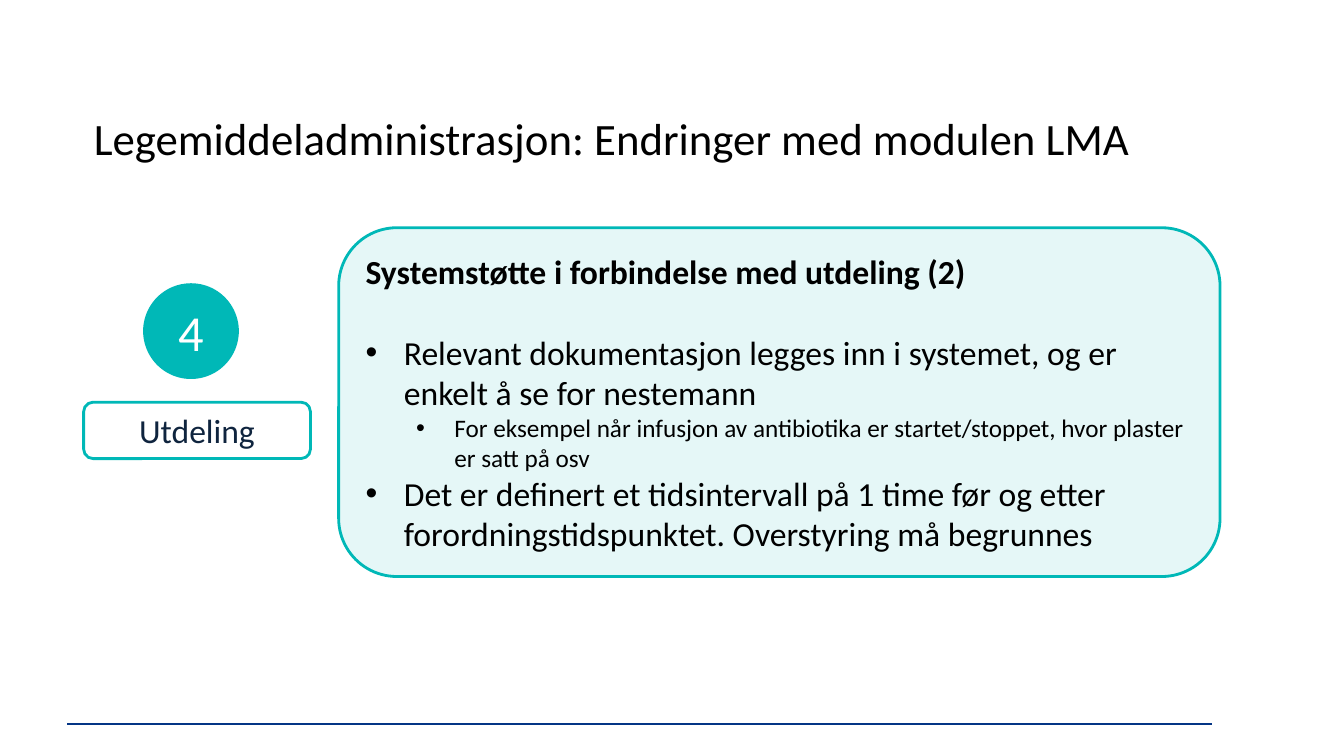
import pptx
import pptx.dml.color
import pptx.enum.shapes
import pptx.enum.text
import pptx.oxml.ns
import pptx.util
from lxml import etree

COLORS = {
    "teal": "00B8B7",
    "navy": "0F243E",
    "rule": "043585",
    "white": "FFFFFF",
    "black": "000000",
}
FONT = "Calibri"
SLIDE_WIDTH = pptx.util.Inches(13.33)
SLIDE_HEIGHT = pptx.util.Inches(7.5)
COLUMN = SLIDE_WIDTH / 40
ROW = SLIDE_HEIGHT / 30
STEP_LEFT = 2.49

SHAPES = pptx.enum.shapes.MSO_SHAPE
ALIGN = pptx.enum.text.PP_ALIGN
MIDDLE = pptx.enum.text.MSO_ANCHOR.MIDDLE


def color(name):
    return pptx.dml.color.RGBColor.from_string(COLORS[name])


def area(left, top, width, height):
    """Turn grid columns and rows into lengths on the slide."""
    return (round(left * COLUMN), round(top * ROW),
            round(width * COLUMN), round(height * ROW))


def add_xml(parent, tag, **attributes):
    return etree.SubElement(parent, pptx.oxml.ns.qn(tag), attributes)


def format_paragraph(para, size, color_name, align=ALIGN.LEFT, bold=False):
    para.alignment = align
    para.font.name = FONT
    para.font.size = pptx.util.Pt(size)
    para.font.bold = bold
    para.font.color.rgb = color(color_name)


def add_bullet(para, indent):
    """Hang a bullet 0.38 inches left of the indent."""
    properties = para._p.get_or_add_pPr()
    properties.set("marL", str(pptx.util.Inches(indent)))
    properties.set("indent", str(-pptx.util.Inches(0.38)))
    add_xml(properties, "a:buFont", typeface="Arial")
    add_xml(properties, "a:buChar", char="•")


def add_box(shapes, kind, place, fill, line=None, opacity=None):
    box = shapes.add_shape(kind, *area(*place))
    box.shadow.inherit = False
    box.fill.solid()
    box.fill.fore_color.rgb = color(fill)
    if opacity:
        hue = box.fill._xPr.find(".//" + pptx.oxml.ns.qn("a:srgbClr"))
        add_xml(hue, "a:alpha", val=str(opacity * 1000))
    if line:
        box.line.color.rgb = color(line)
        box.line.width = pptx.util.Pt(2)
    else:
        box.line.fill.background()
    box.text_frame.word_wrap = True
    box.text_frame.vertical_anchor = MIDDLE
    return box


def add_label(box, text, size, color_name):
    para = box.text_frame.paragraphs[0]
    para.text = text
    format_paragraph(para, size, color_name, ALIGN.CENTER)


def add_title(page, text, place):
    title = page.shapes.title
    title.left, title.top, title.width, title.height = area(*place)
    title.text_frame.vertical_anchor = MIDDLE
    title.text_frame.text = text
    format_paragraph(title.text_frame.paragraphs[0], 32, "black")


def add_rule(page, left, right, row):
    x, y, width, _ = area(left, row, right - left, 0)
    rule = page.shapes.add_connector(
        pptx.enum.shapes.MSO_CONNECTOR.STRAIGHT, x, y, x + width, y)
    rule.line.color.rgb = color("rule")
    rule.line.width = pptx.util.Pt(1.25)
    add_xml(rule._element.spPr, "a:effectLst")


def add_panel(page, place, heading, bullets):
    """Add the tinted panel; bullets are (level, text) pairs."""
    panel = add_box(page.shapes, SHAPES.ROUNDED_RECTANGLE, place,
                    "teal", line="teal", opacity=10)
    frame = panel.text_frame
    frame.paragraphs[0].text = heading
    format_paragraph(frame.paragraphs[0], 24, "black", bold=True)
    frame.paragraphs[0].space_after = pptx.util.Pt(29)
    for level, text in bullets:
        para = frame.add_paragraph()
        para.text = text
        para.level = level
        add_bullet(para, 0.38 + 0.5 * level)
        format_paragraph(para, 24 - 6 * level, "black")


def add_step(page, number, name):
    """Group a numbered circle with the name of the step below it."""
    step = page.shapes.add_group_shape()
    label = add_box(step.shapes, SHAPES.ROUNDED_RECTANGLE,
                    (STEP_LEFT, 15.96, 6.75, 2.24), "white", line="teal")
    add_label(label, name, 24, "navy")
    circle = add_box(step.shapes, SHAPES.OVAL,
                     (4.26, 11.24, 2.85, 3.8), "teal")
    frame = circle.text_frame
    frame.margin_left = frame.margin_right = 0
    frame.margin_top = frame.margin_bottom = 0
    add_label(circle, number, 36, "white")


def main():
    deck = pptx.Presentation()
    deck.slide_width, deck.slide_height = SLIDE_WIDTH, SLIDE_HEIGHT
    page = deck.slides.add_slide(deck.slide_layouts.get_by_name("Title Only"))
    add_rule(page, 2, 36.06, 28.72)
    add_title(page, "Legemiddeladministrasjon: Endringer med modulen LMA",
              (STEP_LEFT, 3.88, 33.13, 3.12))
    add_panel(page, (10.08, 9.04, 26.23, 13.84),
              "Systemstøtte i forbindelse med utdeling (2)", [
        (0, "Relevant dokumentasjon legges inn i systemet, og er enkelt å se "
            "for nestemann"),
        (1, "For eksempel når infusjon av antibiotika er startet/stoppet, "
            "hvor plaster er satt på osv"),
        (0, "Det er definert et tidsintervall på 1 time før og etter "
            "forordningstidspunktet. Overstyring må begrunnes"),
    ])
    add_step(page, "4", "Utdeling")
    deck.save("out.pptx")


if __name__ == "__main__":
    main()
